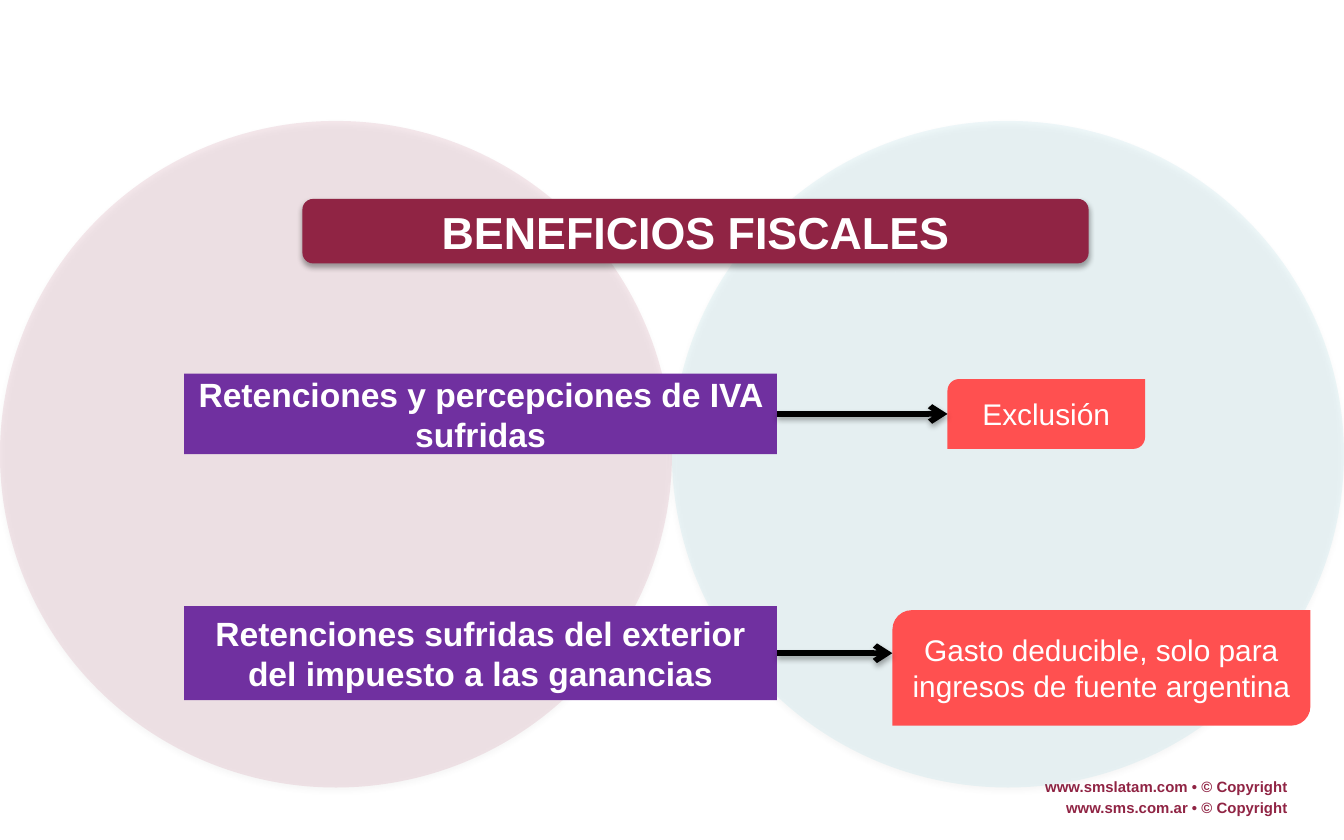
from dataclasses import dataclass

from lxml.etree import SubElement
from pptx import Presentation
from pptx.dml.color import RGBColor
from pptx.enum.shapes import MSO_CONNECTOR, MSO_SHAPE
from pptx.enum.text import MSO_ANCHOR, PP_ALIGN
from pptx.oxml.ns import qn
from pptx.util import Inches, Pt

COLOURS = {
    "white": "FFFFFF",
    "black": "000000",
    "burgundy": "902444",
    "rose": "A4244A",
    "aqua": "61C1D1",
    "purple": "7030A0",
    "coral": "FF5050",
}
FONT = "Arial"


@dataclass(frozen=True)
class Area:
    left: float
    top: float
    width: float
    height: float

    def lengths(self) -> tuple:
        return tuple(Inches(n) for n in (self.left, self.top, self.width, self.height))


@dataclass(frozen=True)
class Label:
    text: str
    size: float
    bold: bool = True
    colour: str = "white"
    align: PP_ALIGN = PP_ALIGN.CENTER


@dataclass(frozen=True)
class Benefit:
    concept: str
    concept_area: Area
    treatment: str
    treatment_area: Area
    arrow_y: float


BENEFITS = [
    Benefit(
        "Retenciones y percepciones de IVA sufridas",
        Area(1.37, 2.78, 4.41, 0.6),
        "Exclusión",
        Area(7.05, 2.82, 1.47, 0.52),
        3.08,
    ),
    Benefit(
        "Retenciones sufridas del exterior del impuesto a las ganancias",
        Area(1.37, 4.51, 4.41, 0.7),
        "Gasto deducible, solo para ingresos de fuente argentina",
        Area(6.64, 4.54, 3.11, 0.86),
        4.86,
    ),
]


def colour_of(name: str) -> RGBColor:
    return RGBColor.from_string(COLOURS[name])


def add_shadow(item, opacity: int, distance: float) -> None:
    properties = item._element.spPr
    effects = properties.find(qn("a:effectLst"))
    if effects is None:
        effects = SubElement(properties, qn("a:effectLst"))
    shadow = SubElement(
        effects,
        qn("a:outerShdw"),
        blurRad=str(Pt(3.1)),
        dist=str(Pt(distance)),
        dir=str(90 * 60000),
        rotWithShape="0",
    )
    colour = SubElement(shadow, qn("a:srgbClr"), val=COLOURS["black"])
    SubElement(colour, qn("a:alpha"), val=str(opacity * 1000))


def write_label(item, label: Label) -> None:
    frame = item.text_frame
    frame.word_wrap = True
    frame.text = label.text
    para = frame.paragraphs[0]
    para.alignment = label.align
    para.font.name = FONT
    para.font.size = Pt(label.size)
    para.font.bold = label.bold
    para.font.color.rgb = colour_of(label.colour)


def add_block(page, kind: MSO_SHAPE, area: Area, fill: str, label: Label | None = None):
    block = page.shapes.add_shape(kind, *area.lengths())
    block.shadow.inherit = False
    block.fill.solid()
    block.fill.fore_color.rgb = colour_of(fill)
    block.line.fill.background()
    if label:
        write_label(block, label)
        block.text_frame.vertical_anchor = MSO_ANCHOR.MIDDLE
    return block


def add_circle(page, left: float, fill: str) -> None:
    circle = add_block(page, MSO_SHAPE.OVAL, Area(left, 0.9, 5, 4.96), fill)
    colour = circle._element.spPr.find(qn("a:solidFill")).find(qn("a:srgbClr"))
    SubElement(colour, qn("a:alpha"), val="10000")
    add_shadow(circle, 38, 1.6)


def add_arrow(page, start: float, end: float, y: float) -> None:
    arrow = page.shapes.add_connector(
        MSO_CONNECTOR.STRAIGHT, Inches(start), Inches(y), Inches(end), Inches(y)
    )
    arrow.line.color.rgb = colour_of("black")
    arrow.line.width = Pt(3)
    SubElement(arrow.line._get_or_add_ln(), qn("a:tailEnd"), type="arrow")
    add_shadow(arrow, 35, 1.8)


def add_footer(page, text: str, top: float) -> None:
    box = page.shapes.add_textbox(*Area(7.54, top, 2.14, 0.24).lengths())
    write_label(box, Label(text, 8, colour="burgundy", align=PP_ALIGN.RIGHT))


def add_benefit(page, benefit: Benefit) -> None:
    concept, treatment = benefit.concept_area, benefit.treatment_area
    add_block(page, MSO_SHAPE.RECTANGLE, concept, "purple", Label(benefit.concept, 18))
    add_block(
        page,
        MSO_SHAPE.ROUND_2_DIAG_RECTANGLE,
        treatment,
        "coral",
        Label(benefit.treatment, 16, bold=False),
    )
    add_arrow(page, concept.left + concept.width, treatment.left, benefit.arrow_y)


def main() -> None:
    deck = Presentation()
    deck.slide_width, deck.slide_height = Inches(10), Inches(6.25)
    page = deck.slides.add_slide(deck.slide_layouts[6])
    add_footer(page, "www.smslatam.com • © Copyright", 5.74)
    add_footer(page, "www.sms.com.ar • © Copyright", 5.89)
    add_circle(page, 5, "aqua")
    add_circle(page, 0, "rose")
    title = add_block(
        page,
        MSO_SHAPE.ROUNDED_RECTANGLE,
        Area(2.25, 1.48, 5.85, 0.48),
        "burgundy",
        Label("BENEFICIOS FISCALES", 24),
    )
    add_shadow(title, 35, 1.8)
    for benefit in BENEFITS:
        add_benefit(page, benefit)
    deck.save("out.pptx")


if __name__ == "__main__":
    main()
